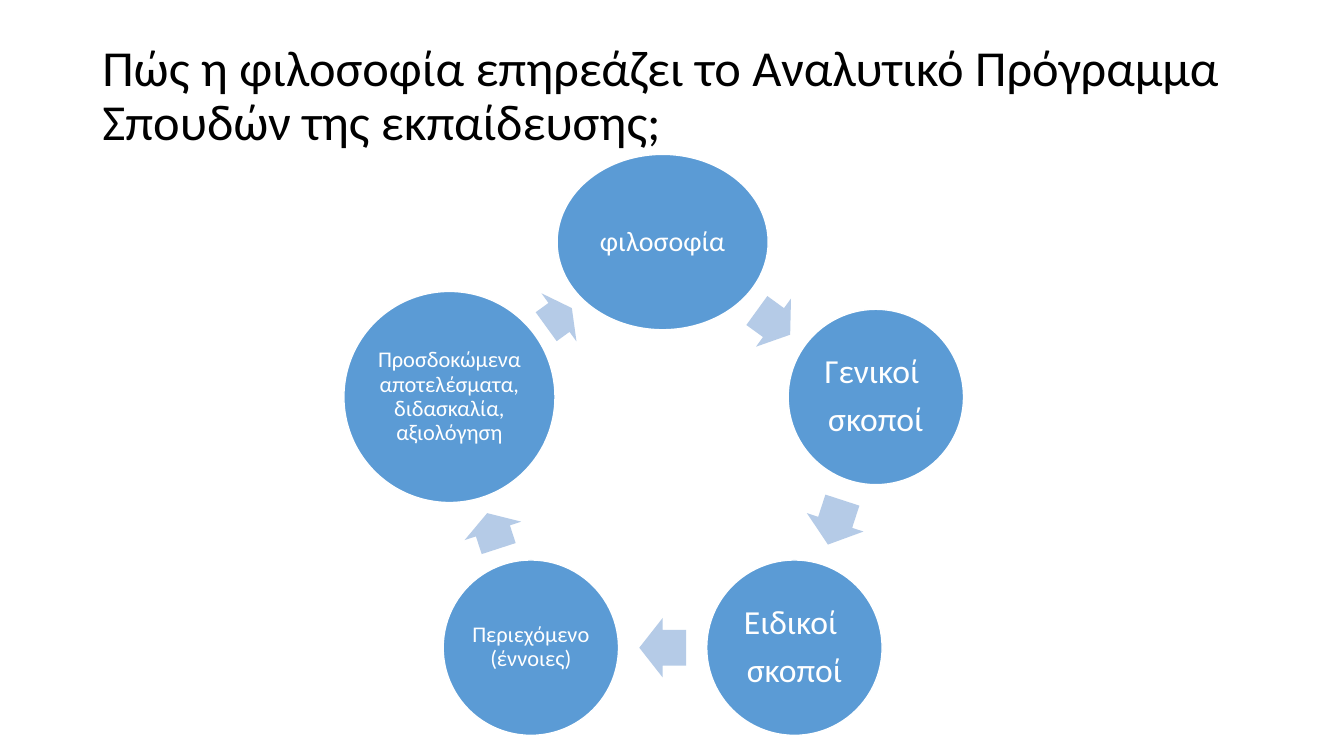
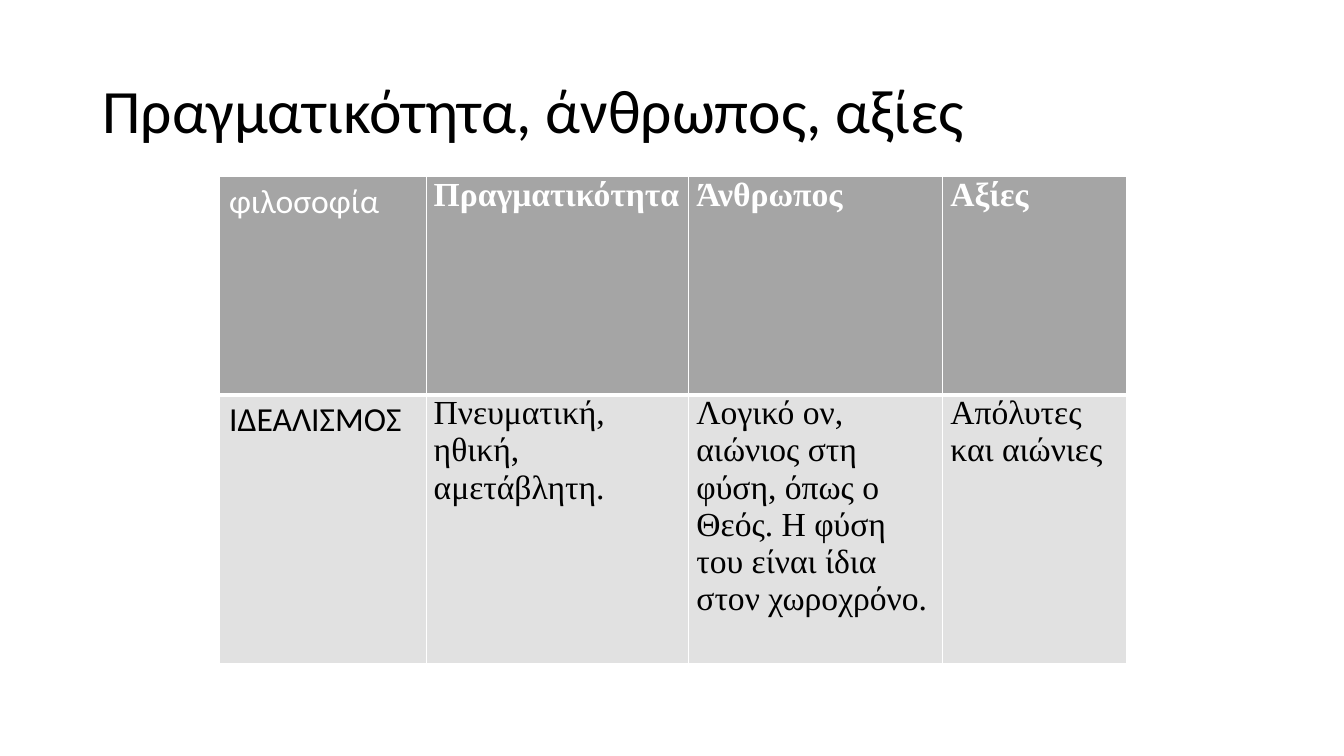
import math
from dataclasses import dataclass

from lxml import etree
from pptx import Presentation
from pptx.dml.color import RGBColor
from pptx.enum.shapes import MSO_SHAPE
from pptx.enum.text import MSO_ANCHOR, PP_ALIGN
from pptx.oxml.ns import qn
from pptx.util import Cm, Pt

OVAL, ARROW = MSO_SHAPE.OVAL, MSO_SHAPE.RIGHT_ARROW
MIDDLE = MSO_ANCHOR.MIDDLE
LEFT, CENTER = PP_ALIGN.LEFT, PP_ALIGN.CENTER


@dataclass(frozen=True)
class Theme:
    sans: str = "Calibri"
    serif: str = "Times New Roman"
    black: str = "000000"
    white: str = "FFFFFF"
    circle: str = "5B9BD5"
    arrow: str = "B5CBE7"
    header: str = "A5A5A5"
    body: str = "E1E1E1"
    long_title: int = 36
    short_title: int = 44
    table_text: int = 24


THEME = Theme()


def write_text(frame, text, size, color, font=THEME.sans, bold=False,
               align=LEFT, line_spacing=1.0, after=0):
    """Fill a frame, one paragraph per line; after is a share of the type size."""
    frame.text = text
    frame.word_wrap = True
    for paragraph in frame.paragraphs:
        paragraph.alignment = align
        paragraph.line_spacing = line_spacing
        paragraph.space_after = Pt(after * size)
        for run in paragraph.runs:
            run.font.name = font
            run.font.size = Pt(size)
            run.font.bold = bold
            run.font.color.rgb = RGBColor.from_string(color)


def set_borders(cell, widths):
    """Draw white cell borders; widths in points as left, right, top, bottom."""
    properties = cell._tc.get_or_add_tcPr()
    for index, (side, width) in enumerate(zip("LRTB", widths)):
        line = etree.Element(qn(f"a:ln{side}"), w=str(Pt(width)))
        fill = etree.SubElement(line, qn("a:solidFill"))
        etree.SubElement(fill, qn("a:srgbClr"), val=THEME.white)
        properties.insert(index, line)


prs = Presentation()
prs.slide_width, prs.slide_height = Cm(33.87), Cm(19.05)

# Titles
titles = [
    ("Πώς η φιλοσοφία επηρεάζει το Αναλυτικό Πρόγραμμα Σπουδών της εκπαίδευσης;",
     THEME.long_title, 2.88),
    ("Πραγματικότητα, άνθρωπος, αξίες", THEME.short_title, 3.68),
]
slides = []
for title, size, height in titles:
    slide = prs.slides.add_slide(prs.slide_layouts[6])
    frame = slide.shapes.add_textbox(Cm(2.33), Cm(1.01), Cm(29.21), Cm(height)).text_frame
    frame.vertical_anchor = MIDDLE
    write_text(frame, title, size, THEME.black, line_spacing=0.9)
    slides.append(slide)
cycle_slide, table_slide = slides

# Cycle: stages stand on a regular pentagon, clockwise from the top
CENTER_X, CENTER_Y, RADIUS = 16.7, 11.75, 5.65
STEP = 72
ARROW_HEIGHT, ARROW_SHARE = 1.5, 0.53
stages = [  # text, type size, width, height
    ("φιλοσοφία", 20, 5.32, 4.42),
    ("Γενικοί \nσκοποί", 24, 4.42, 4.42),
    ("Ειδικοί \nσκοποί", 24, 4.42, 4.42),
    ("Περιεχόμενο (έννοιες)", 16, 4.42, 4.42),
    ("Προσδοκώμενα αποτελέσματα, διδασκαλία, αξιολόγηση", 16, 5.32, 5.32),
]
side_length = 2 * RADIUS * math.sin(math.radians(STEP / 2))

for index, (text, size, width, height) in enumerate(stages):
    place = math.radians(index * STEP - 90)
    x = CENTER_X + RADIUS * math.cos(place)
    y = CENTER_Y + RADIUS * math.sin(place)
    stage = cycle_slide.shapes.add_shape(
        OVAL, Cm(x - width / 2), Cm(y - height / 2), Cm(width), Cm(height))
    stage.shadow.inherit = False
    stage.fill.solid()
    stage.fill.fore_color.rgb = RGBColor.from_string(THEME.circle)
    stage.line.color.rgb = RGBColor.from_string(THEME.white)
    stage.line.width = Pt(1)
    frame = stage.text_frame
    frame.margin_left = frame.margin_right = Cm(0.06)
    frame.margin_top = frame.margin_bottom = Cm(0.06)
    frame.vertical_anchor = MIDDLE
    write_text(frame, text, size, THEME.white, align=CENTER, line_spacing=0.9, after=0.35)

    # The arrow sits in the middle of the gap to the next stage
    turn = index * STEP + STEP / 2
    cos, sin = math.cos(math.radians(turn)), math.sin(math.radians(turn))
    _, _, next_width, next_height = stages[(index + 1) % len(stages)]
    reach = 0.5 / math.hypot(cos / width, sin / height)
    next_reach = 0.5 / math.hypot(cos / next_width, sin / next_height)
    gap = side_length - reach - next_reach
    middle = reach + gap / 2
    length = gap * ARROW_SHARE
    arrow = cycle_slide.shapes.add_shape(
        ARROW, Cm(x + middle * cos - length / 2), Cm(y + middle * sin - ARROW_HEIGHT / 2),
        Cm(length), Cm(ARROW_HEIGHT))
    arrow.rotation = turn
    arrow.adjustments[0], arrow.adjustments[1] = 0.6, 0.5
    arrow.shadow.inherit = False
    arrow.fill.solid()
    arrow.fill.fore_color.rgb = RGBColor.from_string(THEME.arrow)
    arrow.line.fill.background()

# Table of philosophies
rows = [
    ["φιλοσοφία", "Πραγματικότητα", "Άνθρωπος", "Αξίες"],
    ["ΙΔΕΑΛΙΣΜΟΣ", "Πνευματική,\nηθική,\nαμετάβλητη.",
     "Λογικό ον, αιώνιος στη φύση, όπως ο Θεός. Η φύση του είναι ίδια στον χωροχρόνο.",
     "Απόλυτες και αιώνιες"],
]
column_widths = [5.22, 6.62, 6.4, 4.62]
row_heights = [5.5, 6.78]
table = table_slide.shapes.add_table(
    len(rows), len(column_widths), Cm(5.52), Cm(4.45),
    Cm(sum(column_widths)), Cm(sum(row_heights))).table
table.first_row = table.horz_banding = False
for column, width in zip(table.columns, column_widths):
    column.width = Cm(width)
for row, height in zip(table.rows, row_heights):
    row.height = Cm(height)

for row_index, texts in enumerate(rows):
    is_header = row_index == 0
    for column_index, text in enumerate(texts):
        is_name = column_index == 0
        cell = table.cell(row_index, column_index)
        if not is_name:
            cell.margin_left = cell.margin_right = Cm(0.19)
            cell.margin_top = cell.margin_bottom = 0
        cell.fill.solid()
        cell.fill.fore_color.rgb = RGBColor.from_string(
            THEME.header if is_header else THEME.body)
        set_borders(cell, (1, 1, 1, 3 if is_header else 1))
        write_text(cell.text_frame, text, THEME.table_text,
                   THEME.white if is_header else THEME.black,
                   font=THEME.sans if is_name else THEME.serif,
                   bold=is_header and not is_name)

prs.save("out.pptx")
